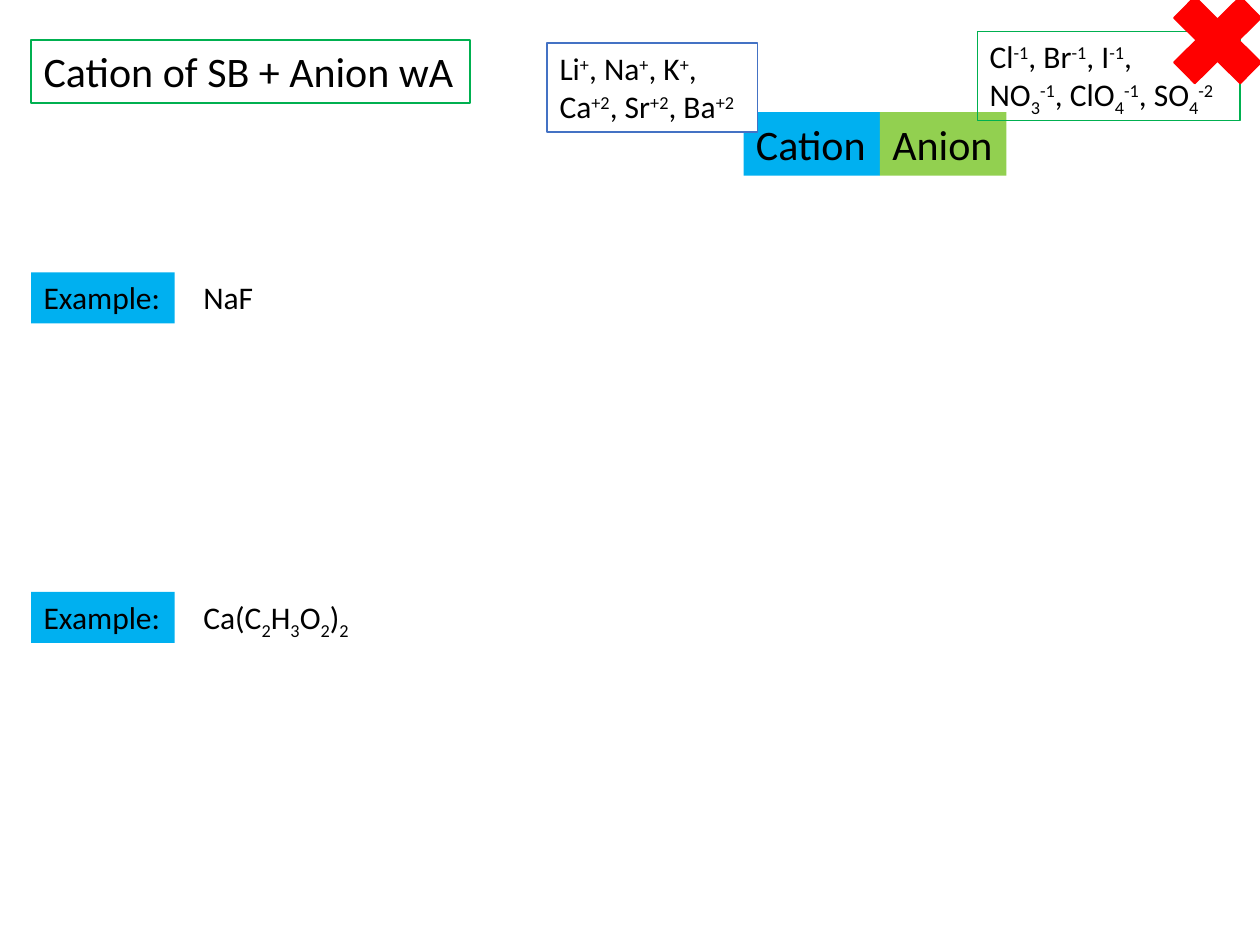
from pptx import Presentation
from pptx.dml.color import RGBColor
from pptx.enum.shapes import MSO_SHAPE as Shape
from pptx.enum.text import MSO_AUTO_SIZE as AutoSize
from pptx.util import Cm, Pt

BLUE, LIME, GREEN, RED = "00B0F0", "92D050", "00B050", "FF0000"
INDIGO, WHITE, BLACK = "4472C4", "FFFFFF", "000000"
BASELINES = {"^": "30000", "_": "-25000"}


def paint(target, color):
    """Give a fill, line fill or font a solid colour."""
    if hasattr(target, "solid"):
        target.solid()
        target = target.fore_color
    target.rgb = RGBColor.from_string(color)


def write(frame, text, size=18, color=BLACK, font="Calibri"):
    """Fill a frame; |^x| marks a superscript and |_x| a subscript."""
    for number, line in enumerate(text.split("\n")):
        paragraph = frame.add_paragraph() if number else frame.paragraphs[0]
        for index, part in enumerate(line.split("|")):
            if not part:
                continue
            is_script = index % 2 == 1
            run = paragraph.add_run()
            run.text = part[1:] if is_script else part
            run.font.size, run.font.name = Pt(size), font
            paint(run.font.color, color)
            if is_script:
                run.font._element.set("baseline", BASELINES[part[0]])


class SlideBuilder:
    def __init__(self, slide):
        self.slide = slide

    def decorate(self, shape, fill, line, weight):
        if fill:
            paint(shape.fill, fill)
        if line:
            paint(shape.line.fill, line)
            shape.line.width = Pt(weight)

    def label(self, text, left, top, width, height,
              fill=None, line=None, weight=1, **text_format):
        box = self.slide.shapes.add_textbox(Cm(left), Cm(top), Cm(width), Cm(height))
        self.decorate(box, fill, line, weight)
        write(box.text_frame, text, **text_format)
        box.text_frame.word_wrap = False
        box.text_frame.auto_size = AutoSize.SHAPE_TO_FIT_TEXT

    def cross(self, left, top, width, height, color):
        mark = self.slide.shapes.add_shape(
            Shape.MATH_MULTIPLY, Cm(left), Cm(top), Cm(width), Cm(height))
        mark.shadow.inherit = False
        self.decorate(mark, color, color, 1)


def main():
    deck = Presentation()
    deck.slide_width, deck.slide_height = Cm(25.4), Cm(19.05)
    builder = SlideBuilder(deck.slides.add_slide(deck.slide_layouts[6]))

    # Heading
    margin = 0.63
    builder.label("Cation of SB + Anion wA", margin, 0.8, 8.85, 1.28,
                  line=GREEN, size=24)

    # Salt made of a cation and an anion
    builder.label("Cation", 14.99, 2.26, 2.75, 1.28, fill=BLUE, size=24)
    builder.label("Anion", 17.74, 2.26, 2.55, 1.28, fill=LIME, size=24)

    # Ions of strong bases and of strong acids
    builder.label("Li|^+|, Na|^+|, K|^+|,\nCa|^+2|, Sr|^+2|, Ba|^+2|",
                  11.03, 0.87, 4.24, 1.8, fill=WHITE, line=INDIGO)
    builder.label("Cl|^-1|, Br|^-1|, I|^-1|,\n"
                  "NO|_3||^-1|, ClO|_4||^-1|, SO|_4||^-2|",
                  19.7, 0.63, 5.3, 1.8, line=GREEN, weight=0.75)

    # Examples
    for formula, top, width in (("NaF", 5.49, 1.52),
                                ("Ca(C|_2|H|_3|O|_2|)|_2|", 11.93, 3.6)):
        builder.label("Example:", margin, top, 2.89, 1.03, fill=BLUE)
        builder.label(formula, 3.85, top, width, 1.03)

    # Strong acid anions are ruled out
    builder.cross(23.26, -0.46, 2.57, 2.54, RED)

    deck.save("out.pptx")


if __name__ == "__main__":
    main()
